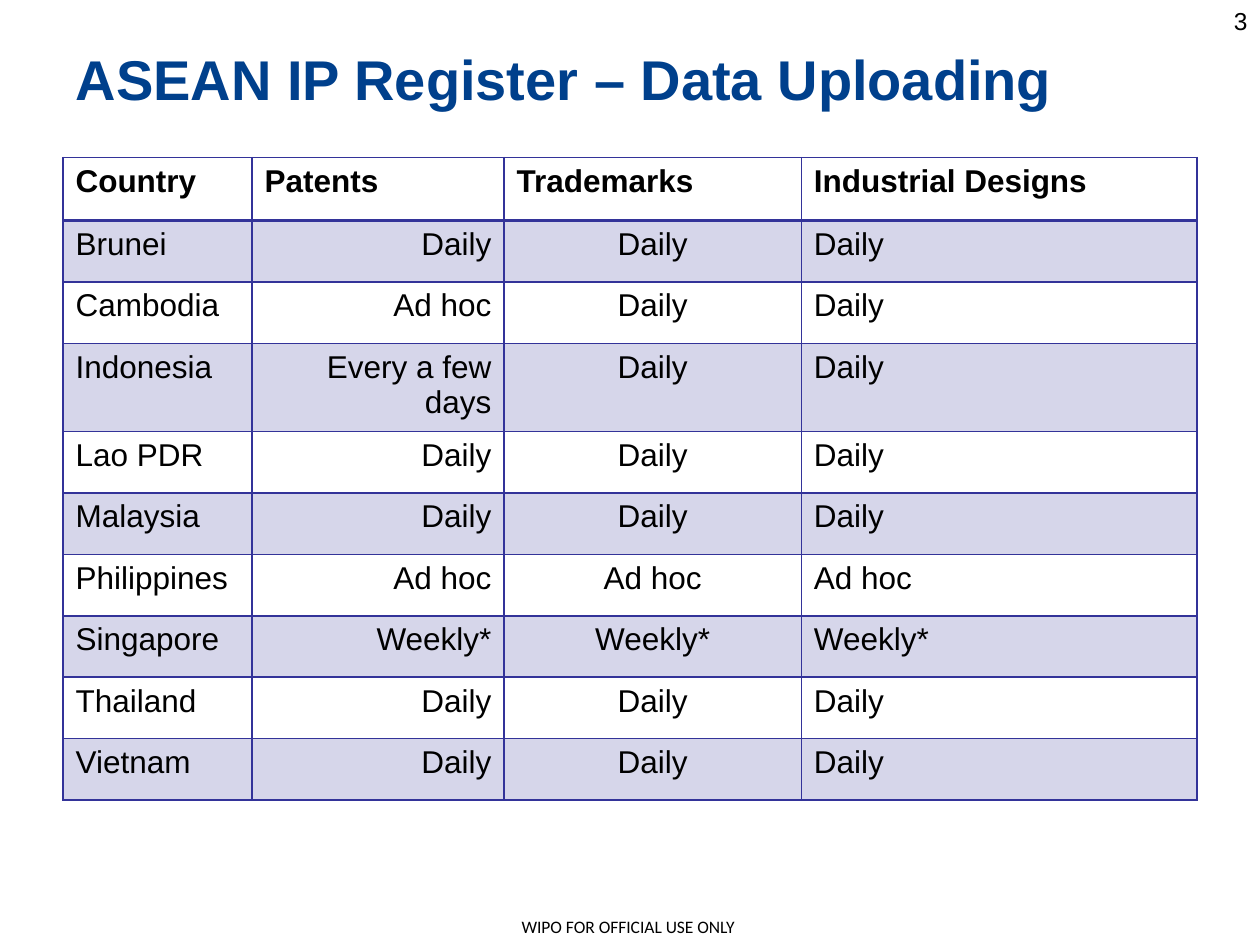
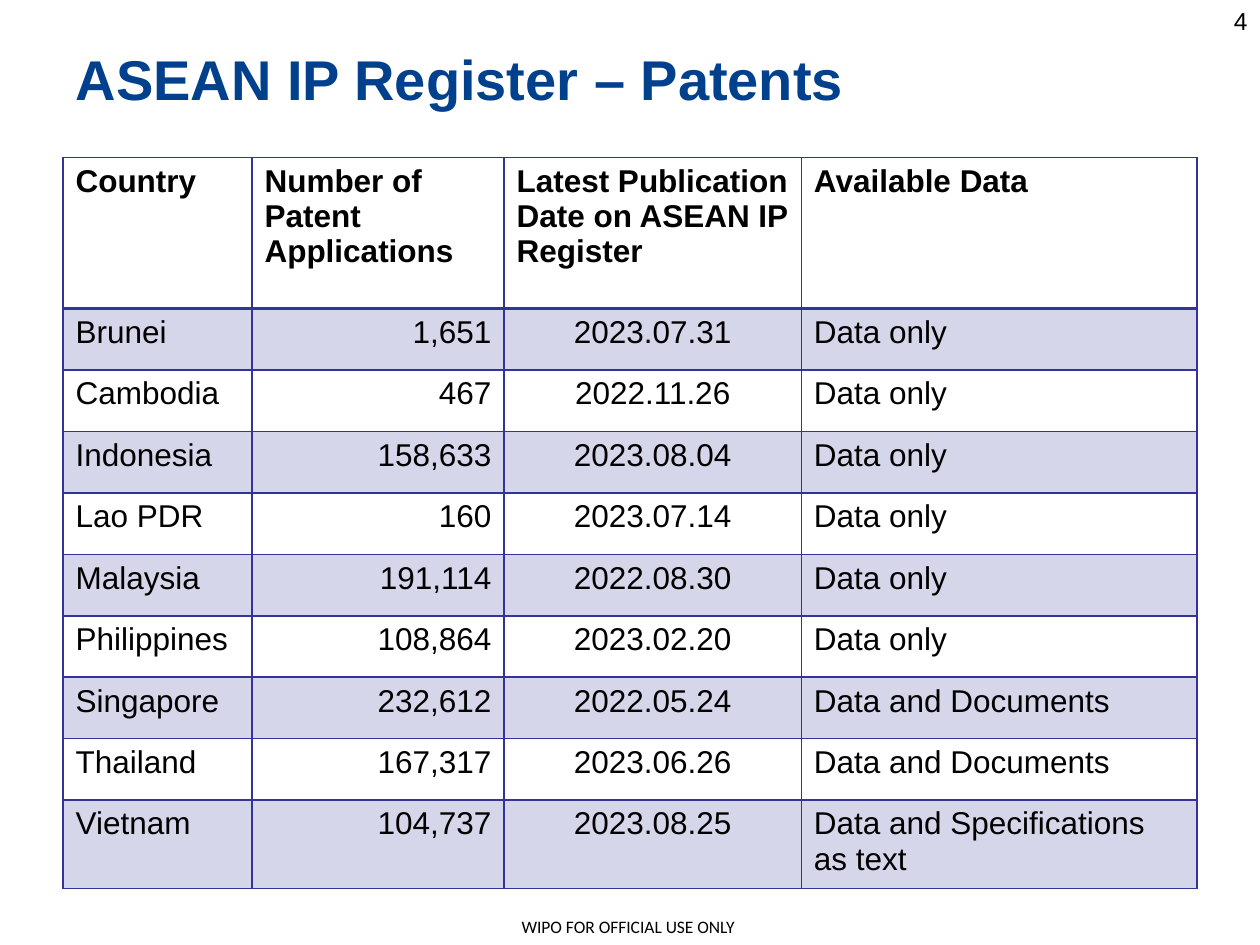
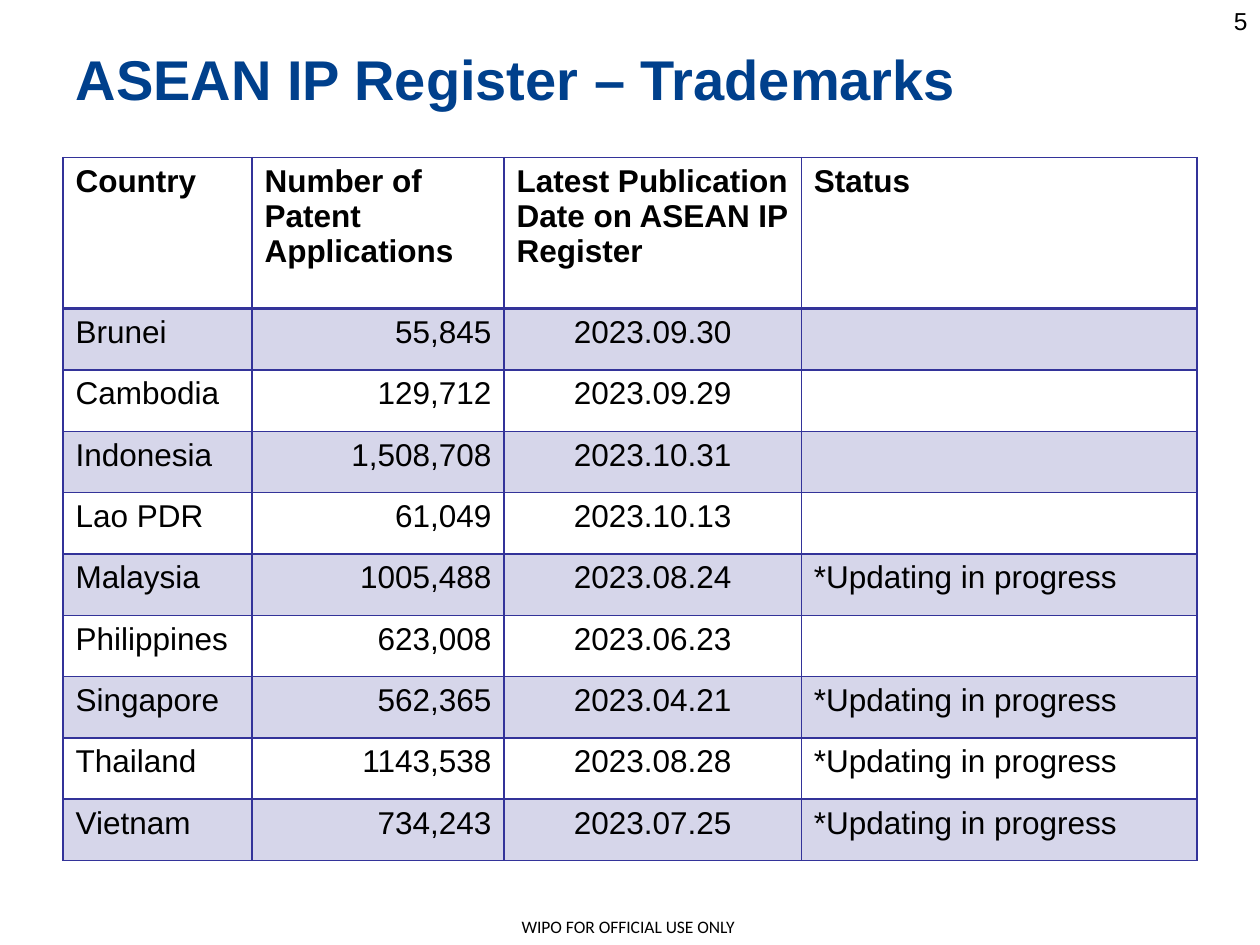
"""Build three slides of register tables with a shared title, number and footer."""
from lxml import etree
from pptx import Presentation
from pptx import util as u
from pptx.dml.color import RGBColor
from pptx.enum import text
from pptx.oxml.ns import qn

HUES = {"title": "00408C", "grid": "333399", "ink": "000000"}
LEFT, CENTER, RIGHT = text.PP_ALIGN.LEFT, text.PP_ALIGN.CENTER, text.PP_ALIGN.RIGHT
ALIGNS = [LEFT, RIGHT, CENTER, LEFT]
COLS = [1.5, 2, 2.36, 3.14]
EDGE, TOP, WIDE = 0.5, 1.25, sum(COLS)
TALL_ROW = 0.7
LANDS = ["Brunei", "Cambodia", "Indonesia", "Lao PDR", "Malaysia",
         "Philippines", "Singapore", "Thailand", "Vietnam"]
COUNT = "Number of Patent Applications"
LATEST = "Latest Publication Date on ASEAN IP Register"
BUSY = "*Updating in progress"

PAGES = [
    {"title": "Data Uploading", "tall": 5.1, "head": 0.5, "long": ["Indonesia"],
     "heads": ["Country", "Patents", "Trademarks", "Industrial Designs"],
     "cols": [
         ["Daily", "Ad hoc", "Every a few days", "Daily", "Daily",
          "Ad hoc", "Weekly*", "Daily", "Daily"],
         *[["Daily"] * 5 + ["Ad hoc", "Weekly*", "Daily", "Daily"]] * 2]},
    {"title": "Patents", "tall": 5.8, "head": 1.2, "long": ["Vietnam"],
     "heads": ["Country", COUNT, LATEST, "Available Data"],
     "cols": [
         ["1,651", "467", "158,633", "160", "191,114",
          "108,864", "232,612", "167,317", "104,737"],
         ["2023.07.31", "2022.11.26", "2023.08.04", "2023.07.14", "2022.08.30",
          "2023.02.20", "2022.05.24", "2023.06.26", "2023.08.25"],
         ["Data only"] * 6 + ["Data and Documents"] * 2
         + ["Data and Specifications as text"]]},
    {"title": "Trademarks", "tall": 5.58, "head": 1.2, "long": [],
     "heads": ["Country", COUNT, LATEST, "Status"],
     "cols": [
         ["55,845", "129,712", "1,508,708", "61,049", "1005,488",
          "623,008", "562,365", "1143,538", "734,243"],
         ["2023.09.30", "2023.09.29", "2023.10.31", "2023.10.13", "2023.08.24",
          "2023.06.23", "2023.04.21", "2023.08.28", "2023.07.25"],
         [""] * 4 + [BUSY, ""] + [BUSY] * 3]},
]


def write(frame, words, size, align=LEFT, bold=False, face="Arial", hue="ink"):
    frame.text = words
    frame.word_wrap = True
    para = frame.paragraphs[0]
    para.alignment = align
    font = para.font
    font.name, font.size, font.bold = face, u.Pt(size), bold
    font.color.rgb = RGBColor.from_string(HUES[hue])


def style(cell, row):
    props = cell._tc.get_or_add_tcPr()
    for side in "LRTB":
        thick = 2 if (side, row) in [("B", 0), ("T", 1)] else 1
        line = etree.SubElement(props, qn(f"a:ln{side}"), w=str(u.Pt(thick)))
        paint = etree.SubElement(line, qn("a:solidFill"))
        etree.SubElement(paint, qn("a:srgbClr"), val=HUES["grid"])
    if row % 2:
        cell.fill.solid()
        cell.fill.fore_color.rgb = RGBColor.from_string(HUES["grid"])
        tint = props.find(qn("a:solidFill")).find(qn("a:srgbClr"))
        etree.SubElement(tint, qn("a:alpha"), val="20000")
    else:
        cell.fill.background()


deck = Presentation()
deck.slide_width, deck.slide_height = u.Inches(10), u.Inches(7.5)

for num, page in enumerate(PAGES, 3):
    slide = deck.slides.add_slide(deck.slide_layouts[5])
    title = slide.shapes.title
    title.left, title.top, title.width, title.height = map(u.Inches, (EDGE, 0.31, WIDE, 0.62))
    write(title.text_frame, "ASEAN IP Register – " + page["title"], 32, bold=True, hue="title")
    title.text_frame.vertical_anchor = text.MSO_ANCHOR.MIDDLE

    mark = slide.shapes.add_textbox(*map(u.Inches, (7.67, 0, 2.33, 0.52)))
    write(mark.text_frame, str(num), 14, RIGHT)

    foot = slide.shapes.add_textbox(*map(u.Inches, (3.96, 7.21, 2.05, 0.29))).text_frame
    write(foot, "WIPO FOR OFFICIAL USE ONLY", 10, CENTER, face="Calibri")
    foot.margin_left = foot.margin_right = foot.margin_top = foot.margin_bottom = 0
    foot.vertical_anchor = text.MSO_ANCHOR.MIDDLE

    rows = [page["heads"], *zip(LANDS, *page["cols"])]
    box = map(u.Inches, (EDGE, TOP, WIDE, page["tall"]))
    table = slide.shapes.add_table(len(rows), len(COLS), *box).table
    table.first_row = table.horz_banding = False
    for col, wide in zip(table.columns, COLS):
        col.width = u.Inches(wide)

    extra = len(page["long"])
    unit = (page["tall"] - page["head"] - TALL_ROW * extra) / (len(LANDS) - extra)
    for r, row in enumerate(rows):
        high = TALL_ROW if row[0] in page["long"] else unit
        table.rows[r].height = u.Inches(high if r else page["head"])
        for c, words in enumerate(row):
            cell = table.cell(r, c)
            write(cell.text_frame, words, 18, ALIGNS[c] if r else LEFT, bold=r == 0)
            style(cell, r)

deck.save("out.pptx")
